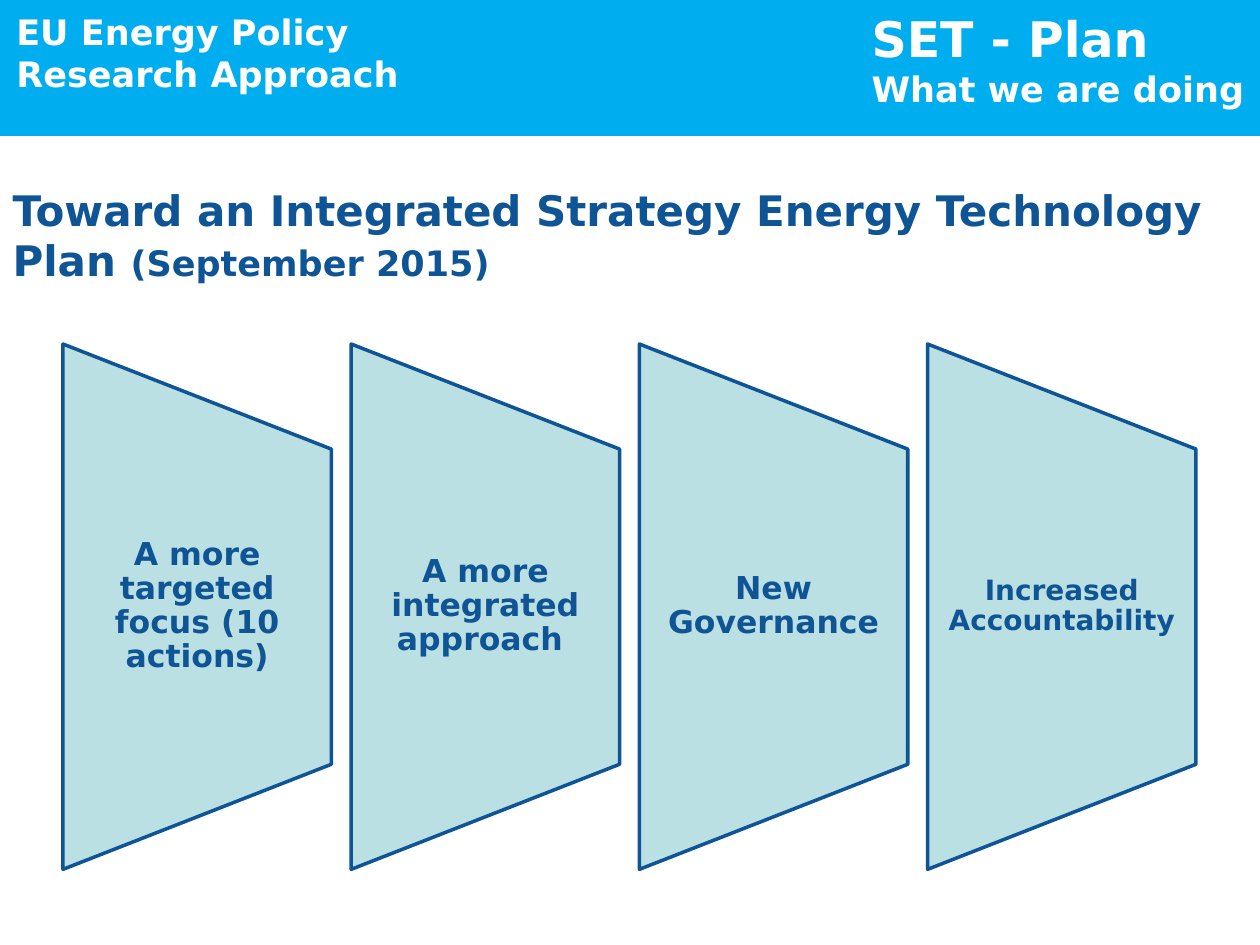
from pptx import Presentation
from pptx.dml.color import RGBColor
from pptx.enum import shapes, text
from pptx.util import Cm, Pt

COLORS = {"band": "00AEF0", "navy": "0F5494", "panel": "BBE0E3", "white": "FFFFFF"}
FONT = "DejaVu Sans"
PANELS = [
    ("A more targeted focus (10 actions)", 18),
    ("A more integrated approach ", 18),
    ("New Governance", 18),
    ("Increased Accountability", 16),
]
PANEL_LEFT, PANEL_PITCH, PANEL_MIDDLE = 1.27, 5.81, 12.23
PANEL_WIDTH, PANEL_HEIGHT, LABEL_HEIGHT = 5.41, 10.59, 6.35


def color(name):
    """Return the named colour."""
    return RGBColor.from_string(COLORS[name])


def add_run(paragraph, wording, size, color_name):
    """Add one bold run to a paragraph."""
    run = paragraph.add_run()
    run.text = wording
    run.font.name = FONT
    run.font.size = Pt(size)
    run.font.bold = True
    run.font.color.rgb = color(color_name)


def add_band(slide):
    """Add the coloured band across the top."""
    shape = slide.shapes.add_shape(
        shapes.MSO_SHAPE.RECTANGLE, 0, 0, Cm(25.4), Cm(2.74)
    )
    shape.shadow.inherit = False
    shape.fill.solid()
    shape.fill.fore_color.rgb = color("band")
    shape.line.fill.background()


def format_title(slide):
    """Place the title and add its two sizes of text."""
    title = slide.shapes.title
    title.left, title.top, title.width, title.height = 0, Cm(3.53), Cm(25.4), Cm(2.39)
    frame = title.text_frame
    frame.word_wrap = True
    frame.auto_size = text.MSO_AUTO_SIZE.NONE
    frame.vertical_anchor = text.MSO_ANCHOR.MIDDLE
    paragraph = frame.paragraphs[0]
    paragraph.alignment = text.PP_ALIGN.LEFT
    paragraph.line_spacing = 1.0
    paragraph.space_before = Pt(0)
    add_run(paragraph, "Toward an Integrated Strategy Energy Technology Plan ", 24, "navy")
    add_run(paragraph, "(September 2015)", 20, "navy")


def add_panel(slide, left, wording, size):
    """Add a tapering panel with its centred label."""
    shape = slide.shapes.add_shape(
        shapes.MSO_SHAPE.FLOWCHART_MANUAL_OPERATION,
        Cm(left + (PANEL_WIDTH - PANEL_HEIGHT) / 2),
        Cm(PANEL_MIDDLE - PANEL_WIDTH / 2),
        Cm(PANEL_HEIGHT),
        Cm(PANEL_WIDTH),
    )
    shape.rotation = 270
    shape.shadow.inherit = False
    shape.fill.solid()
    shape.fill.fore_color.rgb = color("panel")
    shape.line.color.rgb = color("navy")
    shape.line.width = Pt(2)

    label = slide.shapes.add_textbox(
        Cm(left), Cm(PANEL_MIDDLE - LABEL_HEIGHT / 2), Cm(PANEL_WIDTH), Cm(LABEL_HEIGHT)
    )
    frame = label.text_frame
    frame.word_wrap = True
    frame.vertical_anchor = text.MSO_ANCHOR.MIDDLE
    frame.margin_left = frame.margin_right = Cm(0.28)
    frame.margin_top = frame.margin_bottom = 0
    paragraph = frame.paragraphs[0]
    paragraph.alignment = text.PP_ALIGN.CENTER
    paragraph.line_spacing = 0.9
    add_run(paragraph, wording, size, "navy")


def add_heading(slide, left, top, width, height, lines):
    """Add a white heading in the band, one paragraph per line."""
    box = slide.shapes.add_textbox(Cm(left), Cm(top), Cm(width), Cm(height))
    frame = box.text_frame
    frame.word_wrap = False
    frame.auto_size = text.MSO_AUTO_SIZE.SHAPE_TO_FIT_TEXT
    for index, (wording, size) in enumerate(lines):
        paragraph = frame.add_paragraph() if index else frame.paragraphs[0]
        add_run(paragraph, wording, size, "white")


def main():
    """Build the slide and save it."""
    presentation = Presentation()
    presentation.slide_width, presentation.slide_height = Cm(25.4), Cm(19.05)
    slide = presentation.slides.add_slide(presentation.slide_layouts[5])
    add_band(slide)
    format_title(slide)
    for index, (wording, size) in enumerate(PANELS):
        add_panel(slide, PANEL_LEFT + index * PANEL_PITCH, wording, size)
    add_heading(
        slide, 17.32, 0.05, 8.08, 2.31, [("SET - Plan", 28), ("What we are doing", 20)]
    )
    add_heading(
        slide, 0.08, 0.08, 8.23, 1.96, [("EU Energy Policy", 20), ("Research Approach", 20)]
    )
    presentation.save("out.pptx")


if __name__ == "__main__":
    main()
